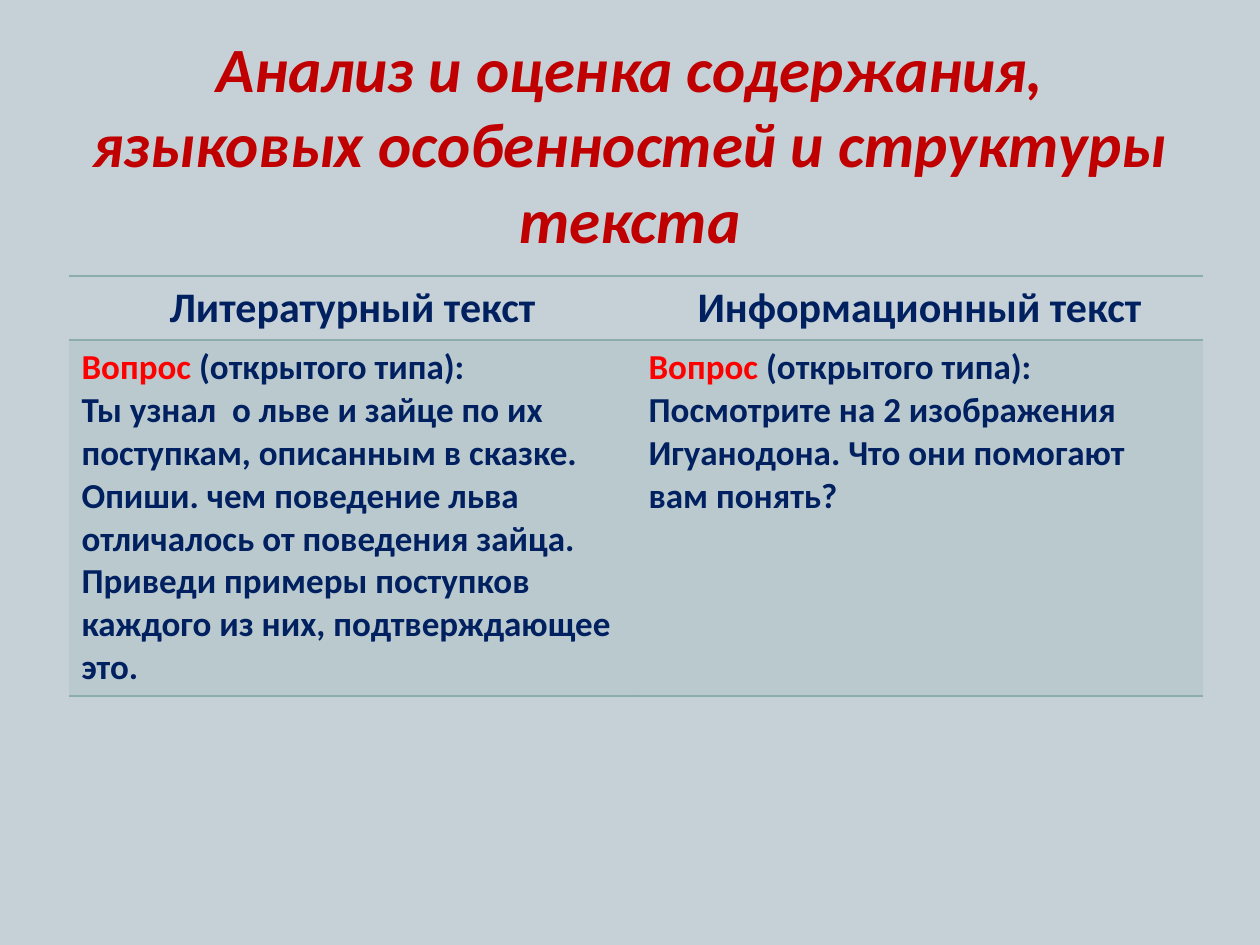
from lxml.etree import SubElement
from pptx import Presentation
from pptx.dml.color import RGBColor
from pptx.enum.text import MSO_ANCHOR, PP_ALIGN
from pptx.oxml import parse_xml
from pptx.oxml.ns import nsdecls, qn
from pptx.util import Pt

SCALE = 914400 / 126
COLORS = {"back": "C5D1D7", "title": "C00000", "text": "002060",
          "mark": "FF0000", "line": "8CADAE"}
FONT = "Calibri"
NO_STYLE = "{2D5ABB26-0587-4C30-8999-92F81FD0307C}"

TITLE = "Анализ и оценка содержания, языковых особенностей и структуры текста"
HEADS = ["Литературный текст", "Информационный текст"]
MARK, KIND = "Вопрос", " (открытого типа):"
TASKS = [
    "Ты узнал  о льве и зайце по их поступкам, описанным в сказке. "
    "Опиши. чем поведение льва отличалось от поведения зайца. "
    "Приведи примеры поступков каждого из них, подтверждающее это.",
    "Посмотрите на 2 изображения Игуанодона. Что они помогают вам понять?",
]


def px(n):
    return round(n * SCALE)


def color(name):
    return RGBColor.from_string(COLORS[name])


def style(para, size, name, align=PP_ALIGN.LEFT):
    para.alignment = align
    font = para.font
    font.name, font.size, font.bold = FONT, Pt(size), True
    font.color.rgb = color(name)


def add_title(slide, x, y, w, h):
    frame = slide.shapes.add_textbox(px(x), px(y), px(w), px(h)).text_frame
    frame.word_wrap = True
    frame.vertical_anchor = MSO_ANCHOR.MIDDLE
    para = frame.paragraphs[0]
    para.text = TITLE
    style(para, 36, "title", PP_ALIGN.CENTER)
    para.font.italic = True


def add_rules(cell, sides):
    """Draw cell borders; they must come before the fill in the XML."""
    props = cell._tc.get_or_add_tcPr()
    for spot, side in enumerate(sides):
        props.insert(spot, parse_xml(
            f'<a:ln{side} {nsdecls("a")} w="12700"><a:solidFill>'
            f'<a:srgbClr val="{COLORS["line"]}"/></a:solidFill></a:ln{side}>'))


def fill_head(cell, text):
    cell.fill.background()
    add_rules(cell, "TB")
    para = cell.text_frame.paragraphs[0]
    para.text = text
    style(para, 24, "text", PP_ALIGN.CENTER)


def fill_task(cell, text):
    cell.fill.solid()
    cell.fill.fore_color.rgb = color("line")
    tint = cell._tc.tcPr.find(".//" + qn("a:srgbClr"))
    SubElement(tint, qn("a:alpha")).set("val", "20000")
    add_rules(cell, "TB")
    frame = cell.text_frame
    first, second = frame.paragraphs[0], frame.add_paragraph()
    mark = first.add_run()
    mark.text = MARK
    mark.font.color.rgb = color("mark")
    first.add_run().text = KIND
    second.text = text
    for para in (first, second):
        style(para, 20, "text")


def add_grid(slide, x, y, w, heights):
    shape = slide.shapes.add_table(2, len(HEADS), px(x), px(y), px(w),
                                   px(sum(heights)))
    table = shape.table
    table.first_row = table.horz_banding = False
    table._tbl.tblPr.find(qn("a:tableStyleId")).text = NO_STYLE
    for row, height in zip(table.rows, heights):
        row.height = px(height)
    for col, (head, task) in enumerate(zip(HEADS, TASKS)):
        fill_head(table.cell(0, col), head)
        fill_task(table.cell(1, col), task)


def main():
    deck = Presentation()
    deck.slide_width, deck.slide_height = px(1260), px(945)
    slide = deck.slides.add_slide(deck.slide_layouts[6])
    back = slide.background.fill
    back.solid()
    back.fore_color.rgb = color("back")
    add_title(slide, 63, 49, 1134, 187)
    add_grid(slide, 69, 276, 1134, [64, 356])
    deck.save("out.pptx")


if __name__ == "__main__":
    main()
